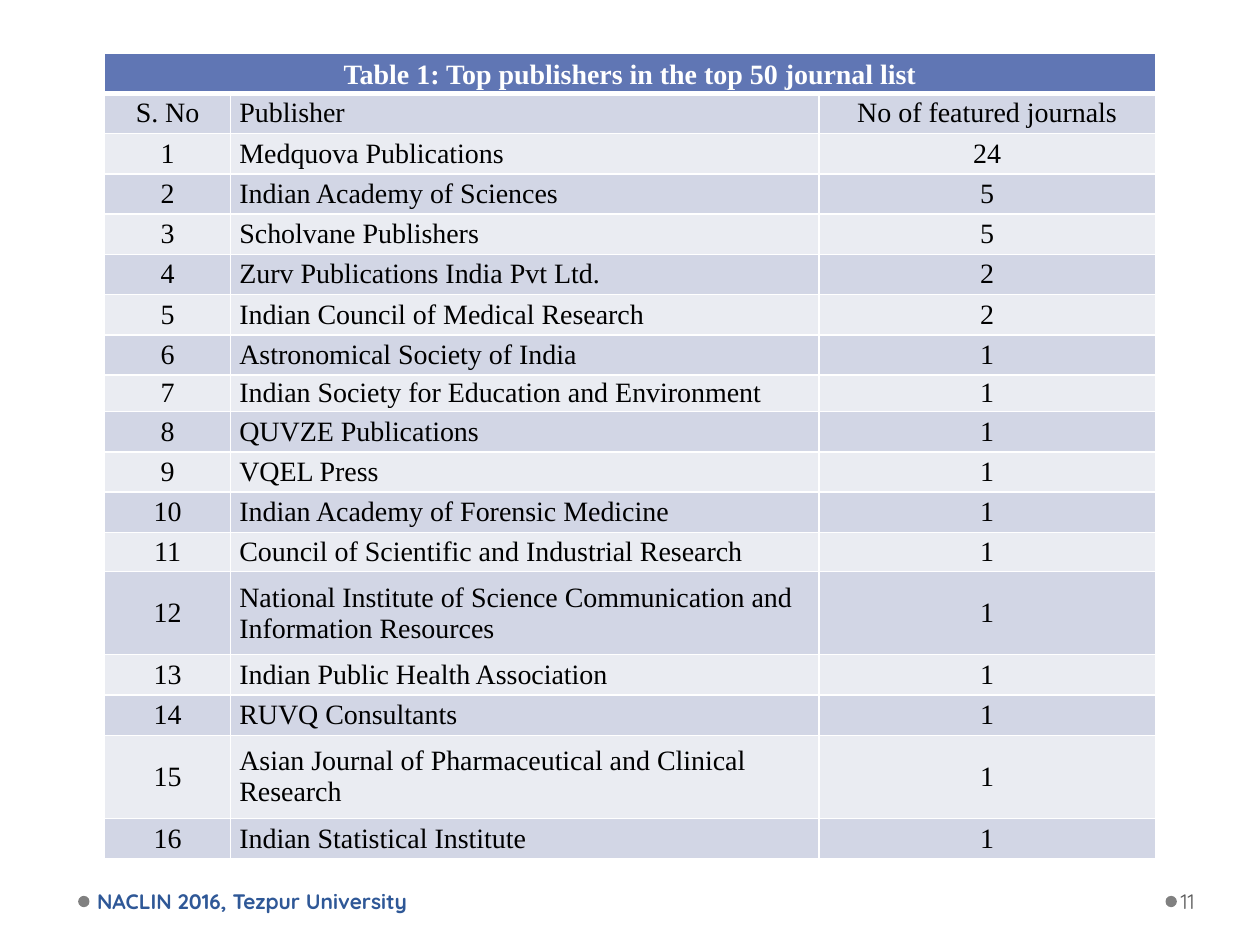
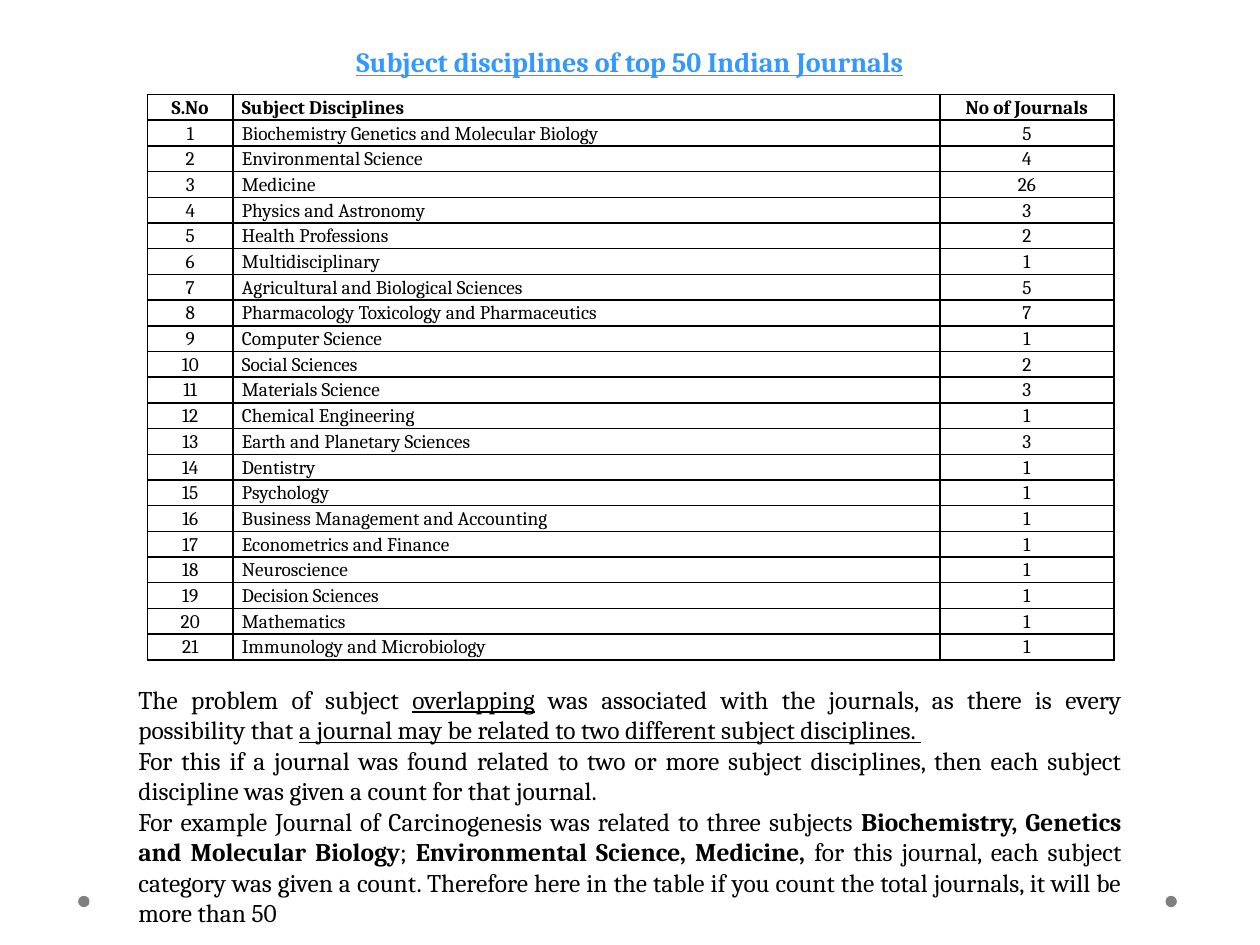
from dataclasses import dataclass

from lxml import etree
from pptx import Presentation
from pptx.dml.color import RGBColor
from pptx.enum import shapes, text
from pptx.oxml.ns import qn
from pptx.util import Inches, Pt


@dataclass(frozen=True)
class Theme:
    white: str = "FFFFFF"
    black: str = "000000"
    header: str = "6076B4"
    bands: tuple = ("D2D6E5", "EAECF2")
    title: str = "3399FF"
    footer: str = "2F5897"
    number: str = "595959"
    dot: str = "808080"
    serif: str = "Times New Roman"
    book: str = "Cambria"
    sans: str = "Quicksand"
    title_size: float = 16
    publisher_size: float = 16
    subject_size: float = 11
    body_size: float = 14.5
    footer_size: float = 12


THEME = Theme()
LEFT, CENTER, JUSTIFY = text.PP_ALIGN.LEFT, text.PP_ALIGN.CENTER, text.PP_ALIGN.JUSTIFY
MIDDLE, TOP, BOTTOM = text.MSO_ANCHOR.MIDDLE, text.MSO_ANCHOR.TOP, text.MSO_ANCHOR.BOTTOM
COLUMN_ALIGNS = (CENTER, LEFT, CENTER)

PUBLISHERS = [
    ("Medquova Publications", 24),
    ("Indian Academy of Sciences", 5),
    ("Scholvane Publishers", 5),
    ("Zurv Publications India Pvt Ltd.", 2),
    ("Indian Council of Medical Research", 2),
    ("Astronomical Society of India", 1),
    ("Indian Society for Education and Environment", 1),
    ("QUVZE Publications", 1),
    ("VQEL Press", 1),
    ("Indian Academy of Forensic Medicine", 1),
    ("Council of Scientific and Industrial Research", 1),
    ("National Institute of Science Communication and Information Resources", 1),
    ("Indian Public Health Association", 1),
    ("RUVQ Consultants", 1),
    ("Asian Journal of Pharmaceutical and Clinical Research", 1),
    ("Indian Statistical Institute", 1),
]
PUBLISHER_ROW_HEIGHTS = {8: 0.29, 12: 0.31, 13: 0.66, 16: 0.66}

SUBJECTS = [
    ("Biochemistry Genetics and Molecular Biology", 5),
    ("Environmental Science", 4),
    ("Medicine", 26),
    ("Physics and Astronomy", 3),
    ("Health Professions", 2),
    ("Multidisciplinary", 1),
    ("Agricultural and Biological Sciences", 5),
    ("Pharmacology Toxicology and Pharmaceutics", 7),
    ("Computer Science", 1),
    ("Social Sciences", 2),
    ("Materials Science", 3),
    ("Chemical Engineering", 1),
    ("Earth and Planetary Sciences", 3),
    ("Dentistry", 1),
    ("Psychology", 1),
    ("Business Management and Accounting", 1),
    ("Econometrics and Finance", 1),
    ("Neuroscience", 1),
    ("Decision Sciences", 1),
    ("Mathematics", 1),
    ("Immunology and Microbiology", 1),
]

OVERLAP_NOTES = [
    [("The problem of subject ", ""), ("overlapping", "u"),
     (" was associated with the journals, as there is every possibility that ", ""),
     ("a journal may be related to two different subject disciplines. ", "u")],
    [("For this if a journal was found related to two or more subject disciplines, "
      "then each subject discipline was given a count for that journal.", "")],
    [("For example Journal of Carcinogenesis was related to three subjects ", ""),
     ("Biochemistry, Genetics and Molecular Biology", "b"), ("; ", ""),
     ("Environmental Science, Medicine, ", "b"),
     ("for this journal, each subject category was given a count. Therefore here in "
      "the table if you count the total journals, it will be more than 50", "")],
]


def rgb(color):
    return RGBColor.from_string(color)


def style_paragraph(p, font, size, color, align=LEFT, bold=None, underline=None):
    p.alignment = align
    p.font.name, p.font.size = font, Pt(size)
    p.font.color.rgb = rgb(color)
    p.font.bold, p.font.underline = bold, underline


def add_text(s, box, paragraphs, anchor, insets=(0.1, 0.05, 0.1, 0.05), **style):
    tf = s.shapes.add_textbox(*map(Inches, box)).text_frame
    tf.word_wrap = True
    tf.vertical_anchor = anchor
    tf.margin_left, tf.margin_top, tf.margin_right, tf.margin_bottom = map(Inches, insets)
    for i, runs in enumerate(paragraphs):
        p = tf.add_paragraph() if i else tf.paragraphs[0]
        style_paragraph(p, **style)
        for words, marks in runs:
            r = p.add_run()
            r.text = words
            if "b" in marks:
                r.font.bold = True
            if "u" in marks:
                r.font.underline = True


def set_borders(cell, color, top=1, bottom=1):
    tc_pr = cell._tc.get_or_add_tcPr()
    widths = {"a:lnL": 1, "a:lnR": 1, "a:lnT": top, "a:lnB": bottom}
    for i, (tag, width) in enumerate(widths.items()):
        ln = etree.Element(qn(tag), w=str(Pt(width)))
        fill = etree.SubElement(ln, qn("a:solidFill"))
        etree.SubElement(fill, qn("a:srgbClr"), val=color)
        tc_pr.insert(i, ln)


def add_grid(s, left, top, widths, heights):
    table = s.shapes.add_table(len(heights), len(widths), Inches(left), Inches(top),
                               Inches(sum(widths)), Inches(sum(heights))).table
    table.first_row = table.horz_banding = False
    for column, width in zip(table.columns, widths):
        column.width = Inches(width)
    for row, height in zip(table.rows, heights):
        row.height = Inches(height)
    return table


def fill_cell(cell, words, anchor, fill=None, spacing=None, **style):
    cell.margin_left = cell.margin_right = Inches(0.07)
    cell.margin_top = cell.margin_bottom = 0
    cell.vertical_anchor = anchor
    if fill:
        cell.fill.solid()
        cell.fill.fore_color.rgb = rgb(fill)
    else:
        cell.fill.background()
    p = cell.text_frame.paragraphs[0]
    p.text = str(words)
    p.line_spacing = spacing
    style_paragraph(p, **style)


def numbered(entries):
    return [(i, *entry) for i, entry in enumerate(entries, 1)]


def publisher_table(s, left, top):
    rows = [("S. No", "Publisher", "No of featured journals"), *numbered(PUBLISHERS)]
    heights = [PUBLISHER_ROW_HEIGHTS.get(i, 0.32) for i in range(len(rows) + 1)]
    table = add_grid(s, left, top, (1, 4.67, 2.67), heights)
    style = dict(anchor=MIDDLE, font=THEME.serif, size=THEME.publisher_size)
    heading = table.cell(0, 0)
    heading.merge(table.cell(0, 2))
    fill_cell(heading, "Table 1: Top publishers in the top 50 journal list", fill=THEME.header,
              spacing=1.15, color=THEME.white, align=CENTER, bold=True, **style)
    for cell in table.rows[0].cells:
        set_borders(cell, THEME.white, bottom=3)
    for i, row in enumerate(rows):
        for j, words in enumerate(row):
            cell = table.cell(i + 1, j)
            fill_cell(cell, words, fill=THEME.bands[i % 2], color=THEME.black,
                      align=COLUMN_ALIGNS[j], **style)
            set_borders(cell, THEME.white, top=1 if i else 3)


def subject_table(s, left, top):
    rows = [("S.No", "Subject Disciplines", "No of Journals"), *numbered(SUBJECTS)]
    table = add_grid(s, left, top, (0.68, 5.61, 1.38), [0.19] * len(rows))
    for i, row in enumerate(rows):
        for j, words in enumerate(row):
            cell = table.cell(i, j)
            fill_cell(cell, words, TOP, spacing=1.11, font=THEME.book, size=THEME.subject_size,
                      color=THEME.black, align=COLUMN_ALIGNS[j], bold=i == 0)
            set_borders(cell, THEME.black)


def footer_dots(s):
    for left in (0.62, 9.25):
        sp = s.shapes.add_shape(shapes.MSO_SHAPE.OVAL, Inches(left), Inches(7.11),
                                Inches(0.09), Inches(0.09))
        sp.shadow.inherit = False
        sp.fill.solid()
        sp.fill.fore_color.rgb = rgb(THEME.dot)
        sp.line.fill.background()


def footer_text(s, event, number):
    style = dict(anchor=MIDDLE, font=THEME.sans, size=THEME.footer_size)
    add_text(s, (0.72, 6.95, 3.11, 0.4), [[(event, "")]], insets=(0.05, 0.05, 0.1, 0.05),
             color=THEME.footer, bold=True, **style)
    add_text(s, (9.34, 6.95, 0.61, 0.4), [[(number, "")]], insets=(0.03, 0.05, 0.05, 0.05),
             color=THEME.number, **style)


def new_slide(prs):
    s = prs.slides.add_slide(prs.slide_layouts[6])
    footer_dots(s)
    return s


def publishers_slide(prs):
    s = new_slide(prs)
    publisher_table(s, 0.83, 0.42)
    footer_text(s, "NACLIN 2016, Tezpur University", "11")


def subjects_slide(prs):
    s = new_slide(prs)
    subject_table(s, 1.17, 0.75)
    add_text(s, (0.5, 0.17, 9, 0.5), [[("Subject disciplines of top 50 Indian Journals", "")]],
             BOTTOM, font=THEME.book, size=THEME.title_size, color=THEME.title,
             align=CENTER, bold=True, underline=True)
    add_text(s, (1, 5.38, 8, 2.12), OVERLAP_NOTES, TOP, font=THEME.book,
             size=THEME.body_size, color=THEME.black, align=JUSTIFY)


def main():
    prs = Presentation()
    prs.slide_width, prs.slide_height = Inches(10), Inches(7.5)
    publishers_slide(prs)
    subjects_slide(prs)
    prs.save("out.pptx")


if __name__ == "__main__":
    main()
